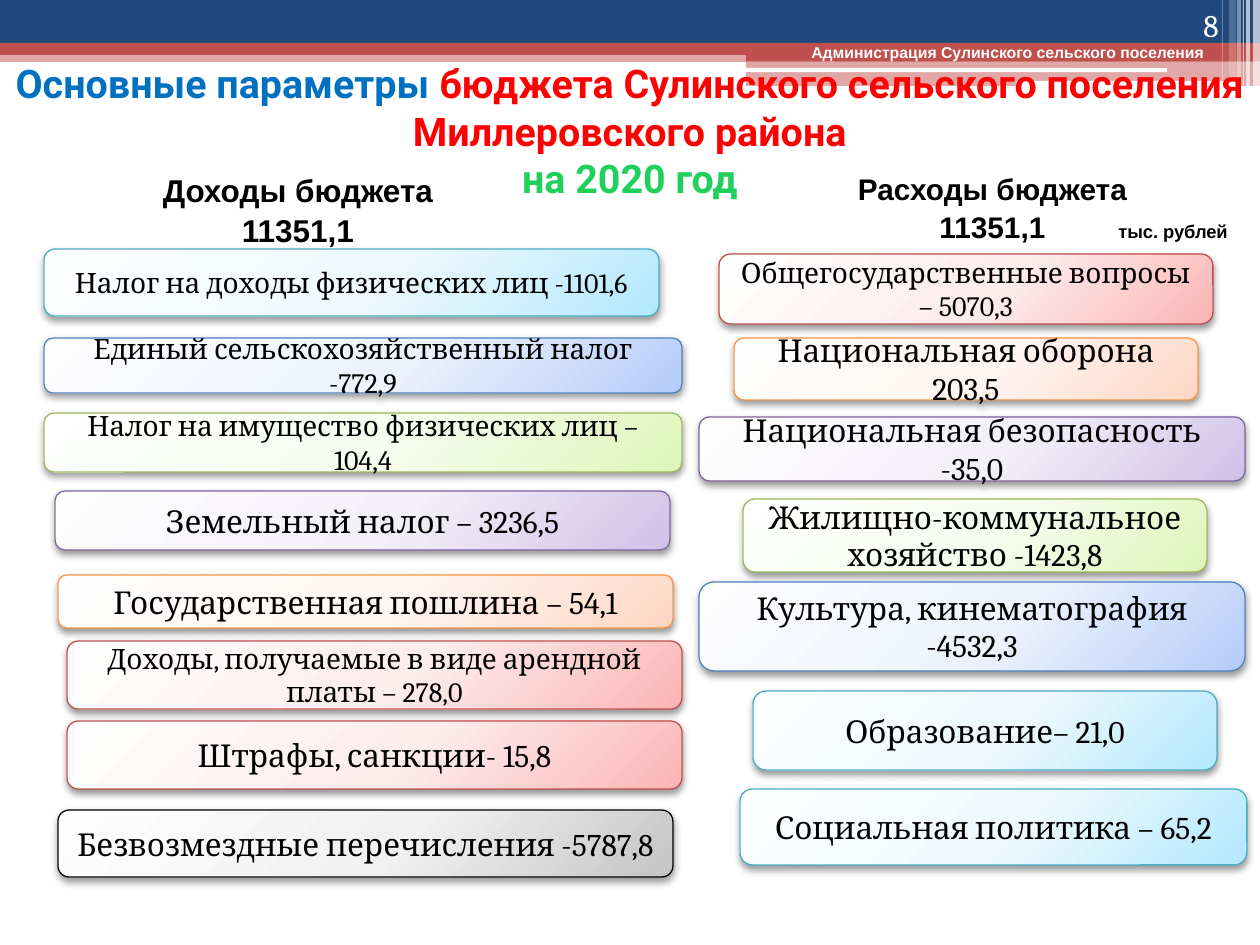
from typing import NamedTuple

from pptx import Presentation
from pptx.dml.color import RGBColor
from pptx.enum.shapes import MSO_SHAPE
from pptx.enum.text import MSO_ANCHOR, MSO_AUTO_SIZE, PP_ALIGN
from pptx.oxml import parse_xml
from pptx.oxml.ns import nsdecls, qn
from pptx.util import Pt

EMU_PER_PX = 914400 / 126
NAVY, RED, WHITE, BLACK = "1F497D", "C0504D", "FFFFFF", "000000"


class Band(NamedTuple):
    left: int
    top: int
    width: int
    height: int
    color: str
    opacity: int = 100
    rounded: bool = False


class Tint(NamedTuple):
    line: str
    start: str
    middle: str
    end: str


class Item(NamedTuple):
    left: int
    top: int
    width: int
    height: int
    tint: Tint
    text: str
    size: int = 18


class Label(NamedTuple):
    left: int
    top: int
    width: int
    height: int
    lines: list[str]
    size: float
    color: str = BLACK
    align: PP_ALIGN = PP_ALIGN.LEFT
    font: str = "Arial"
    bold: bool = True
    anchor: MSO_ANCHOR = MSO_ANCHOR.TOP
    space: float = 0


AQUA = Tint("4BACC6", "FEFFFF", "EDF9FE", "B2E8FF")
BLUE = Tint("4F81BD", "FEFEFF", "EDF3FD", "B5CCF9")
GREEN = Tint("9BBB59", "FEFFFE", "F6FCEE", "DDF6B8")
VIOLET = Tint("8064A2", "FEFEFE", "F3F0F9", "D0C1E7")
ORANGE = Tint("F79646", "FFFEFE", "FFF5F1", "FFD7C5")
ROSE = Tint("C0504D", "FFFEFE", "FDEDED", "FBB5B4")
GRAY = Tint("000000", "FEFEFE", "F1F1F1", "C5C5C5")

BANDS = [
    Band(0, 50, 1260, 12, RED, 50),
    Band(0, 0, 1260, 43, NAVY),
    Band(0, 43, 1260, 12, RED),
    Band(746, 49, 514, 12, RED),
    Band(746, 61, 514, 25, RED, 50),
    Band(745, 68, 422, 4, WHITE, rounded=True),
    Band(1016, 81, 220, 5, WHITE, rounded=True),
    Band(1253, 0, 7, 86, WHITE, 65),
    Band(1246, 0, 4, 86, WHITE, 65),
    Band(1243, 0, 1, 86, WHITE, 60),
    Band(1237, 0, 4, 86, WHITE, 40),
    Band(1229, 0, 7, 80, WHITE, 20),
    Band(1222, 0, 1, 80, WHITE, 30),
]

TITLE = [
    ("Основные параметры ", "0070C0"),
    ("бюджета Сулинского сельского поселения Миллеровского района", "FF0000"),
    ("на 2020 год", "1FD15A"),
]

LABELS = [
    Label(799, 37, 427, 31, ["Администрация Сулинского сельского поселения"], 9, WHITE),
    Label(134, 165, 328, 89, ["Доходы бюджета", "11351,1"], 18, align=PP_ALIGN.CENTER, space=1),
    Label(809, 165, 367, 84, ["Расходы бюджета", "11351,1"], 17, align=PP_ALIGN.CENTER, space=1),
    Label(1106, 214, 213, 35, ["тыс. рублей"], 10.5),
    Label(1126, 0, 105, 50, ["8"], 18, WHITE, PP_ALIGN.RIGHT, "Cambria", False, MSO_ANCHOR.BOTTOM),
]

INCOME = [
    Item(44, 249, 615, 67, AQUA, "Налог на доходы физических лиц -1101,6", 16),
    Item(44, 338, 638, 55, BLUE, "Единый сельскохозяйственный налог -772,9", 16),
    Item(44, 413, 638, 59, GREEN, "Налог на имущество физических лиц – 104,4", 16),
    Item(55, 491, 615, 59, VIOLET, "Земельный налог – 3236,5"),
    Item(58, 575, 615, 53, ORANGE, "Государственная пошлина – 54,1"),
    Item(67, 641, 615, 68, ROSE, "Доходы, получаемые в виде арендной платы – 278,0", 16),
    Item(67, 721, 615, 68, ROSE, "Штрафы, санкции- 15,8"),
    Item(58, 810, 615, 67, GRAY, "Безвозмездные перечисления -5787,8"),
]

SPENDING = [
    Item(719, 254, 494, 70, ROSE, "Общегосударственные вопросы – 5070,3", 16),
    Item(734, 338, 464, 62, ORANGE, "Национальная оборона 203,5"),
    Item(699, 417, 546, 64, VIOLET, "Национальная безопасность -35,0"),
    Item(743, 499, 464, 73, GREEN, "Жилищно-коммунальное хозяйство -1423,8"),
    Item(699, 582, 546, 89, BLUE, "Культура, кинематография -4532,3"),
    Item(753, 691, 464, 79, AQUA, "Образование– 21,0"),
    Item(740, 789, 507, 76, AQUA, "Социальная политика – 65,2"),
]


def px(*lengths: int) -> list[int]:
    return [round(length * EMU_PER_PX) for length in lengths]


def rgb(color: str) -> RGBColor:
    return RGBColor.from_string(color)


def add_span(para, text: str, *, size: float, font: str, color: str = BLACK, bold: bool = False) -> None:
    span = para.add_run()
    span.text = text
    span.font.size, span.font.name, span.font.bold = Pt(size), font, bold
    span.font.color.rgb = rgb(color)


def draw_band(page, band: Band) -> None:
    kind = MSO_SHAPE.ROUNDED_RECTANGLE if band.rounded else MSO_SHAPE.RECTANGLE
    shape = page.shapes.add_shape(kind, *px(*band[:4]))
    shape.shadow.inherit = False
    shape.line.fill.background()
    shape.fill.solid()
    shape.fill.fore_color.rgb = rgb(band.color)
    if band.opacity < 100:
        color = shape.element.spPr.find(qn("a:solidFill")).find(qn("a:srgbClr"))
        color.append(parse_xml(f'<a:alpha {nsdecls("a")} val="{band.opacity * 1000}"/>'))


def draw_title(page) -> None:
    title = page.shapes.title
    title.element.getparent().append(title.element)
    title.left, title.top, title.width, title.height = px(0, 96, 1260, 69)
    frame = title.text_frame
    frame.word_wrap, frame.auto_size = True, MSO_AUTO_SIZE.NONE
    frame.vertical_anchor = MSO_ANCHOR.MIDDLE
    para = frame.paragraphs[0]
    para.alignment = PP_ALIGN.CENTER
    for text, color in TITLE:
        if text == TITLE[-1][0]:
            para.add_line_break()
        add_span(para, text, size=22.5, font="Roboto", color=color, bold=True)


def draw_label(page, label: Label) -> None:
    frame = page.shapes.add_textbox(*px(*label[:4])).text_frame
    frame.word_wrap, frame.vertical_anchor = True, label.anchor
    for index, text in enumerate(label.lines):
        para = frame.add_paragraph() if index else frame.paragraphs[0]
        para.alignment = label.align
        if index:
            para.space_before = Pt(label.space)
        add_span(para, text, size=label.size, font=label.font, color=label.color, bold=label.bold)


def draw_item(page, item: Item) -> None:
    shape = page.shapes.add_shape(MSO_SHAPE.FLOWCHART_ALTERNATE_PROCESS, *px(*item[:4]))
    shape.line.color.rgb, shape.line.width = rgb(item.tint.line), Pt(0.75)
    shape.shadow.inherit = False
    properties = shape.element.spPr
    stops = "".join(
        f'<a:gs pos="{position}"><a:srgbClr val="{color}"/></a:gs>'
        for position, color in zip((0, 55000, 100000), item.tint[1:])
    )
    properties.insert(2, parse_xml(
        f'<a:gradFill {nsdecls("a")} rotWithShape="1"><a:gsLst>{stops}</a:gsLst><a:path path="circle">'
        '<a:fillToRect l="-40000" t="-90000" r="140000" b="190000"/></a:path></a:gradFill>'
    ))
    properties.find(qn("a:effectLst")).append(parse_xml(
        f'<a:outerShdw {nsdecls("a")} blurRad="{Pt(4.1)}" dist="{Pt(2)}" dir="5400000" rotWithShape="0">'
        '<a:srgbClr val="000000"><a:alpha val="40000"/></a:srgbClr></a:outerShdw>'
    ))
    frame = shape.text_frame
    frame.word_wrap, frame.vertical_anchor = True, MSO_ANCHOR.MIDDLE
    para = frame.paragraphs[0]
    para.alignment = PP_ALIGN.CENTER
    add_span(para, item.text, size=item.size, font="Cambria")


def main() -> None:
    """Build the budget overview slide."""
    deck = Presentation()
    deck.slide_width, deck.slide_height = px(1260, 945)
    page = deck.slides.add_slide(deck.slide_layouts[5])
    for band in BANDS:
        draw_band(page, band)
    draw_title(page)
    for label in LABELS:
        draw_label(page, label)
    for item in INCOME + SPENDING:
        draw_item(page, item)
    deck.save("out.pptx")


if __name__ == "__main__":
    main()
